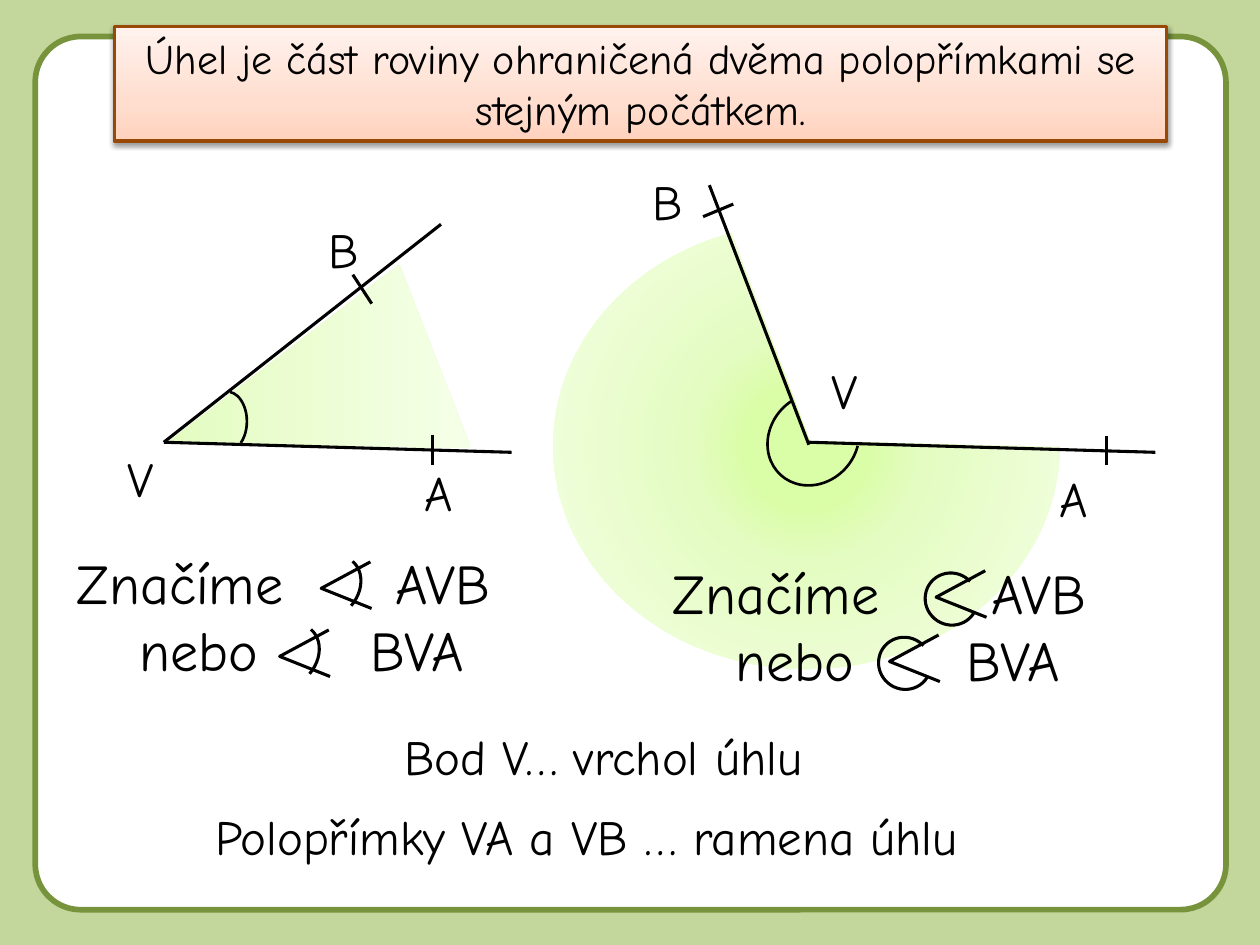
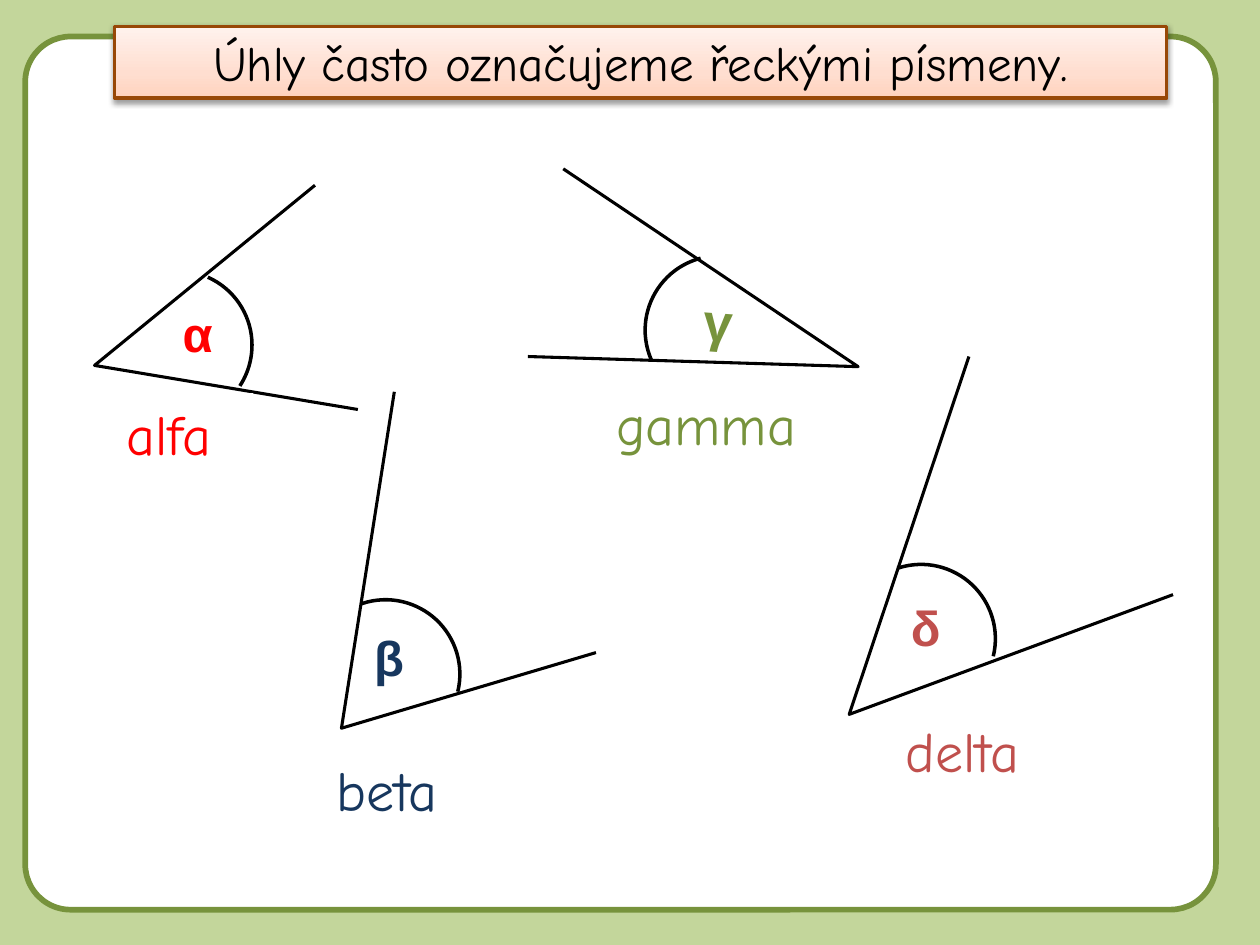
from lxml import etree
from pptx import Presentation
from pptx.dml.color import RGBColor
from pptx.enum.shapes import MSO_CONNECTOR as Link, MSO_SHAPE as Preset
from pptx.enum.text import MSO_ANCHOR as Anchor, PP_ALIGN as Align
from pptx.oxml.ns import qn
from pptx.util import Inches, Pt

BLACK, WHITE = "000000", "FFFFFF"
GREEN, PALE_GREEN = "77933C", "C3D69B"
RED, NAVY, BRICK, BROWN = "FF0000", "17375E", "C0504D", "984807"
PEACH = [(0, "FFD2BD"), (35, "FFDED0"), (100, "FFF2ED")]
LIME_DISC = [(18, "DAFDA7"), (35, "E4FCC2"), (100, "F5FFE7")]
LIME_WEDGE = [(0, "E4FCC2"), (100, "F5FFE7")]
HAND, GREEK = "Comic Neue", "Arial"


def color(hex_code):
    return RGBColor.from_string(hex_code)


def inches(values):
    return [Inches(value) for value in values]


def add_element(parent, tag, **attributes):
    values = {name: str(value) for name, value in attributes.items()}
    return etree.SubElement(parent, qn(tag), values)


class Painter:
    """Holds the deck style and the slide being drawn."""

    def __init__(self, deck):
        self.deck = deck
        self.shapes = None

    def start_page(self, title, frame_left, title_height, title_size):
        page = self.deck.slides.add_slide(self.deck.slide_layouts[6])
        page.background.fill.solid()
        page.background.fill.fore_color.rgb = color(PALE_GREEN)
        self.shapes = page.shapes
        frame = self.shape(Preset.ROUNDED_RECTANGLE, (frame_left, 0.29, 9.45, 6.93),
                           WHITE, GREEN, 3.25)
        frame.adjustments[0] = 0.052
        self.title(title, title_height, title_size)

    def title(self, words, height, size):
        band = self.shape(Preset.RECTANGLE, (0.91, 0.21, 8.35, height), None, BROWN, 2)
        self.gradient(band, PEACH, angle=270)
        effects = band._element.spPr.find(qn("a:effectLst"))
        shadow = add_element(effects, "a:outerShdw", blurRad=Pt(3.1), dist=Pt(1.6),
                             dir=90 * 60000, rotWithShape=0)
        tone = add_element(shadow, "a:srgbClr", val=BLACK)
        add_element(tone, "a:alpha", val=38000)
        self.set_text(band, [words], size=size, align=Align.CENTER)

    def paint(self, shape, fill, line, width):
        shape.shadow.inherit = False
        if fill:
            shape.fill.solid()
            shape.fill.fore_color.rgb = color(fill)
        else:
            shape.fill.background()
        if line:
            shape.line.color.rgb = color(line)
            shape.line.width = Pt(width)
        else:
            shape.line.fill.background()
        return shape

    def shape(self, preset, place, fill=None, line=None, width=1.75):
        return self.paint(self.shapes.add_shape(preset, *inches(place)), fill, line, width)

    def gradient(self, shape, stops, angle=None):
        """Replace an empty fill by a linear gradient, or a round one without angle."""
        properties = shape._element.spPr
        fill = etree.Element(qn("a:gradFill"), {"rotWithShape": "1"})
        stop_list = add_element(fill, "a:gsLst")
        for percent, tone in stops:
            stop = add_element(stop_list, "a:gs", pos=percent * 1000)
            add_element(stop, "a:srgbClr", val=tone)
        if angle is None:
            center = add_element(fill, "a:path", path="circle")
            add_element(center, "a:fillToRect", l=50000, t=50000, r=50000, b=50000)
        else:
            add_element(fill, "a:lin", ang=angle * 60000, scaled=0)
        properties.replace(properties.find(qn("a:noFill")), fill)

    def outline(self, points, fill=None, line=None, close=False):
        first, *others = [inches(point) for point in points]
        builder = self.shapes.build_freeform(*first)
        builder.add_line_segments(others, close=close)
        return self.paint(builder.convert_to_shape(), fill, line, 1.75)

    def line(self, start, end):
        connector = self.shapes.add_connector(Link.STRAIGHT, *inches(start + end))
        connector.line.color.rgb = color(BLACK)
        connector.line.width = Pt(1.75)
        add_element(connector._element.spPr, "a:effectLst")

    def arc(self, place, start=270, end=0, turn=0, width=1.75):
        """Draw an arc between two angles given in degrees."""
        arc = self.shape(Preset.ARC, place, None, BLACK, width)
        arc.rotation = turn
        for index, degrees in enumerate((start, end)):
            arc.adjustments[index] = degrees * 0.6

    def set_text(self, box, lines, size=28, align=Align.LEFT, tone=BLACK, font=HAND,
                 bold=False, wrap=True, tabs=None):
        frame = box.text_frame
        frame.word_wrap = wrap
        frame.vertical_anchor = Anchor.TOP
        for index, words in enumerate(lines):
            para = frame.add_paragraph() if index else frame.paragraphs[0]
            para.alignment = align
            if tabs:
                tab_list = add_element(para._p.get_or_add_pPr(), "a:tabLst")
                for stop in tabs[index]:
                    add_element(tab_list, "a:tab", pos=Inches(stop), algn="l")
            span = para.add_run()
            span.text = words
            for name, value in {"name": font, "size": Pt(size), "bold": bold}.items():
                setattr(span.font, name, value)
            span.font.color.rgb = color(tone)

    def text(self, lines, place, **style):
        box = self.shapes.add_textbox(*inches(place))
        self.set_text(box, lines, **style)
        return box

    def letter(self, words, left, top, **style):
        return self.text([words], (left, top, 0.55, 0.57), **style)

    def angle_sign(self, x, y, reflex):
        self.outline([(x + 0.39, y - 0.21), (x, y), (x + 0.4, y + 0.16)], line=BLACK)
        if reflex:
            self.arc((x - 0.09, y - 0.19, 0.42, 0.41), 351.78, 276.23, turn=40.5)
        else:
            self.arc((x - 0.15, y - 0.28, 0.44, 0.55), turn=40.5)

    def notation(self, left, top, signs, reflex):
        self.text(["Značíme\tAVB", "\tnebo\tBVA"], (left, top, 3.82, 1.18), size=32,
                  wrap=False, tabs=[(2.53,), (0.5, 2.33)])
        for x, y in signs:
            self.angle_sign(x, y, reflex)

    def greek_angle(self, letter, name, tone, sides, arc, letter_at, name_at):
        """Draw one angle with its arc, its Greek letter and the letter's name."""
        self.outline(sides, line=BLACK)
        left, top, end, turn = arc
        self.arc((left, top, 1.18, 1.18), 193, end, turn, width=2)
        x, y, size, tilt = letter_at
        self.letter(letter, x, y, size=size, tone=tone, font=GREEK, bold=True).rotation = tilt
        label = self.shape(Preset.RECTANGLE, (*name_at, 0.64), WHITE)
        self.set_text(label, [name], size=32, align=Align.CENTER, tone=tone)


def draw_definition(painter):
    painter.start_page("Úhel je část roviny ohraničená dvěma polopřímkami se stejným počátkem.",
                       0.28, 0.91, 24)

    disc = painter.shape(Preset.OVAL, (4.39, 1.77, 4.02, 3.54))
    painter.gradient(disc, LIME_DISC)
    painter.outline([(5.74, 1.67), (6.43, 3.5), (8.64, 3.55), (8.76, 1.26)],
                    fill=WHITE, close=True)
    wedge = painter.outline([(3.17, 2.1), (1.34, 3.5), (3.74, 3.56)], close=True)
    painter.gradient(wedge, LIME_WEDGE, angle=0)

    arms = [((3.5, 1.78), (1.3, 3.51)), ((1.3, 3.51), (4.06, 3.59)),
            ((5.63, 1.47), (6.42, 3.53)), ((6.42, 3.51), (9.17, 3.59))]
    ticks = [((2.8, 2.18), (2.95, 2.41)), ((3.43, 3.45), (3.43, 3.69)),
             ((5.58, 1.72), (5.82, 1.62)), ((8.78, 3.46), (8.78, 3.69))]
    for start, end in arms + ticks:
        painter.line(start, end)
    painter.arc((1.65, 3.11, 0.31, 0.47), 275.35, 58.06, width=1.5)
    painter.arc((6.07, 3.14, 0.77, 0.69), 236.15, 107.22, turn=132.4, width=1.5)

    points = [("V", 0.91, 3.51), ("A", 3.27, 3.62), ("B", 2.51, 1.69),
              ("V", 6.5, 2.81), ("A", 8.31, 3.67), ("B", 5.08, 1.31)]
    for name, left, top in points:
        painter.letter(name, left, top)

    painter.notation(0.51, 4.3, [(2.55, 4.67), (2.22, 5.21)], reflex=False)
    painter.notation(5.24, 4.38, [(7.43, 4.74), (7.06, 5.25)], reflex=True)
    painter.text(["Bod V… vrchol úhlu"], (3.11, 5.72, 3.94, 0.57))
    painter.text(["Polopřímky VA a VB … ramena úhlu"], (1.61, 6.35, 7.01, 0.57))


def draw_greek_letters(painter):
    painter.start_page("Úhly často označujeme řeckými písmeny.", 0.2, 0.57, 28)
    angles = [
        ("α", "alfa", RED, [(2.5, 1.47), (0.75, 2.9), (2.84, 3.25)],
         (0.82, 2.15, 292.36, 100.9), (1.35, 2.36, 28, 0), (0.67, 3.12, 1.34)),
        ("β", "beta", NAVY, [(3.13, 3.11), (2.71, 5.78), (4.73, 5.18)],
         (2.47, 4.76, 315.35, 58.3), (2.87, 4.93, 28, 0), (2.4, 5.95, 1.34)),
        ("γ", "gamma", GREEN, [(4.19, 2.83), (6.81, 2.91), (4.47, 1.34)],
         (5.12, 2.03, 292.36, 323), (5.49, 2.25, 30, 4.1), (4.66, 3.04, 1.89)),
        ("δ", "delta", BRICK, [(7.69, 2.83), (6.74, 5.67), (9.31, 4.72)],
         (6.72, 4.48, 315.35, 58.3), (7.13, 4.69, 28, 0), (6.97, 5.64, 1.34)),
    ]
    for angle in angles:
        painter.greek_angle(*angle)


def main():
    deck = Presentation()
    deck.slide_width, deck.slide_height = Inches(10), Inches(7.5)
    painter = Painter(deck)
    draw_definition(painter)
    draw_greek_letters(painter)
    deck.save("out.pptx")


if __name__ == "__main__":
    main()
